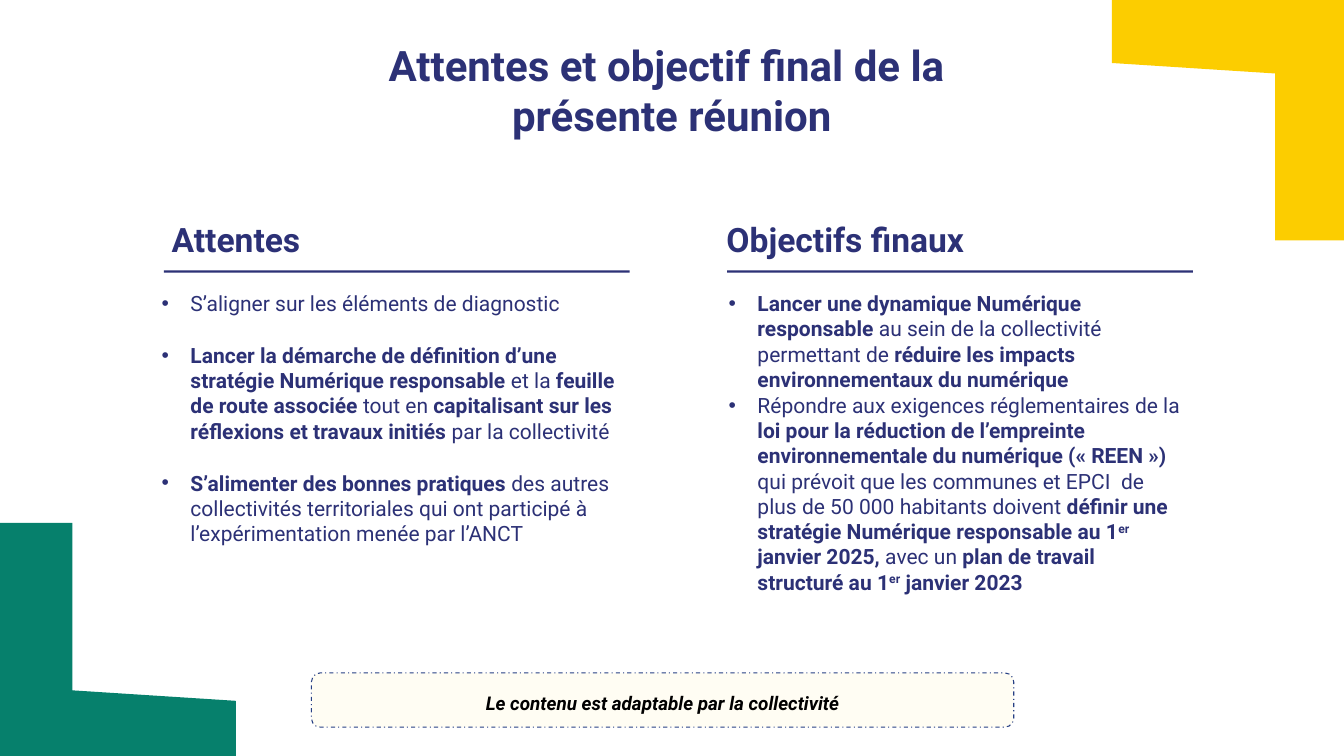
from lxml import etree
from pptx import Presentation
from pptx.dml.color import RGBColor
from pptx.enum.dml import MSO_LINE
from pptx.enum.shapes import MSO_SHAPE
from pptx.enum.text import MSO_ANCHOR, MSO_AUTO_SIZE, PP_ALIGN
from pptx.oxml.ns import qn
from pptx.util import Pt

RECTANGLE, ROUNDED = MSO_SHAPE.RECTANGLE, MSO_SHAPE.ROUNDED_RECTANGLE
TOP, MIDDLE = MSO_ANCHOR.TOP, MSO_ANCHOR.MIDDLE
CENTER, LEFT = PP_ALIGN.CENTER, PP_ALIGN.LEFT
NO_FIT = MSO_AUTO_SIZE.NONE
DASH_DOT = MSO_LINE.DASH_DOT
FONT = "Roboto"
NAVY, YELLOW, GREEN = "2C3176", "FCCD00", "06806C"
PLAIN, BOLD, RAISED = "plain", "bold", "raised"


def color(value):
    return RGBColor.from_string(value)


def format_font(font, size, bold, value=NAVY):
    font.name = FONT
    font.size = Pt(size)
    font.bold = bold
    font.color.rgb = color(value)


expectations = [
    [("S’aligner sur les éléments de diagnostic", PLAIN)],
    [("Lancer la démarche de définition d’une stratégie Numérique responsable ", BOLD),
     ("et la ", PLAIN),
     ("feuille de route associée ", BOLD),
     ("tout en ", PLAIN),
     ("capitalisant sur les réflexions et travaux initiés ", BOLD),
     ("par la collectivité", PLAIN)],
    [("S’alimenter des bonnes pratiques ", BOLD),
     ("des autres collectivités territoriales qui ont participé à "
      "l’expérimentation menée par l’ANCT", PLAIN)],
]
goals = [
    [("Lancer une dynamique Numérique responsable ", BOLD),
     ("au sein de la collectivité permettant de ", PLAIN),
     ("réduire les impacts environnementaux du numérique", BOLD)],
    [("Répondre aux exigences réglementaires de la ", PLAIN),
     ("loi pour la réduction de l’empreinte environnementale du numérique («\u00a0REEN\u00a0») ", BOLD),
     ("qui prévoit que les communes et EPCI  de plus de 50 000 habitants doivent", PLAIN),
     (" définir une stratégie Numérique responsable au 1", BOLD),
     ("er", RAISED),
     (" janvier 2025, ", BOLD),
     ("avec un ", PLAIN),
     ("plan de travail structuré au 1", BOLD),
     ("er", RAISED),
     (" janvier 2023", BOLD)],
]
columns = [
    ("Attentes", expectations, 156.2, 156.2, 153.4, 323, 25.4),
    ("Objectifs finaux", goals, 684.7, 692.6, 693.4, 294, 1),
]
corners = [
    (YELLOW, [(1280, 0), (1059, 0), (1059, 60), (1214.6, 70), (1214.6, 229), (1280, 229)]),
    (GREEN, [(69, 498), (0, 498), (0, 720), (224.6, 720), (224.6, 667.5), (69, 657.5)]),
]

presentation = Presentation()
presentation.slide_width = Pt(1280)
presentation.slide_height = Pt(720)
slide = presentation.slides.add_slide(presentation.slide_layouts[4])
placeholders = slide.placeholders

for fill, points in corners:
    builder = slide.shapes.build_freeform(Pt(points[0][0]), Pt(points[0][1]), scale=1.0)
    builder.add_line_segments([(Pt(x), Pt(y)) for x, y in points[1:]], close=True)
    corner = builder.convert_to_shape()
    corner.shadow.inherit = False
    corner.fill.solid()
    corner.fill.fore_color.rgb = color(fill)
    corner.line.fill.background()

title = slide.shapes.title
title.left, title.top, title.width, title.height = Pt(78.5), Pt(37.4), Pt(1122.5), Pt(97.2)
frame = title.text_frame
frame.text = "Attentes et objectif final de la \vprésente réunion"
frame.auto_size = NO_FIT
frame.vertical_anchor = TOP
frame.margin_left = frame.margin_right = frame.margin_top = frame.margin_bottom = 0
frame.paragraphs[0].alignment = CENTER
for run in frame.paragraphs[0].runs:
    format_font(run.font, 40, True)

for index, (name, items, heading_left, rule_left, list_left, list_height, gap) in enumerate(columns):
    heading = placeholders[2 * index + 1]
    heading.left, heading.top, heading.width, heading.height = Pt(heading_left), Pt(204.5), Pt(458.6), Pt(46)
    frame = heading.text_frame
    frame.text = name
    frame.auto_size = NO_FIT
    frame.vertical_anchor = TOP
    frame.paragraphs[0].space_before = Pt(0)
    format_font(frame.paragraphs[0].runs[0].font, 32, True)

    rule = slide.shapes.add_shape(RECTANGLE, Pt(rule_left), Pt(257.5), Pt(443.5), Pt(2.2))
    rule.shadow.inherit = False
    rule.fill.solid()
    rule.fill.fore_color.rgb = color(NAVY)
    rule.line.fill.background()

    body = placeholders[2 * index + 2]
    body.left, body.top, body.width, body.height = Pt(list_left), Pt(275.8), Pt(434.2), Pt(list_height)
    frame = body.text_frame
    frame.auto_size = NO_FIT
    frame.vertical_anchor = TOP
    frame.margin_left = frame.margin_right = frame.margin_bottom = 0
    frame.margin_top = Pt(1)
    for number, item in enumerate(items):
        paragraph = frame.add_paragraph() if number else frame.paragraphs[0]
        paragraph.alignment = LEFT
        paragraph.space_before = Pt(gap if number else 0)
        properties = paragraph._p.get_or_add_pPr()
        properties.set("marL", str(Pt(28)))
        properties.set("indent", str(-Pt(27.4)))
        etree.SubElement(properties, qn("a:buChar")).set("char", "•")
        for text, style in item:
            run = paragraph.add_run()
            run.text = text
            format_font(run.font, 20, style != PLAIN)
            if style == RAISED:
                run._r.get_or_add_rPr().set("baseline", "30000")

note = slide.shapes.add_shape(ROUNDED, Pt(296.6), Pt(640.8), Pt(668.9), Pt(51.8))
note.shadow.inherit = False
note.fill.solid()
note.fill.fore_color.rgb = color("FFFDF3")
note.line.color.rgb = color("274084")
note.line.width = Pt(1)
note.line.dash_style = DASH_DOT
frame = note.text_frame
frame.text = "Le contenu est adaptable par la collectivité"
frame.word_wrap = True
frame.vertical_anchor = MIDDLE
frame.margin_top = Pt(8.4)
frame.paragraphs[0].alignment = CENTER
note_font = frame.paragraphs[0].runs[0].font
format_font(note_font, 18, True, "000000")
note_font.italic = True

presentation.save("out.pptx")
